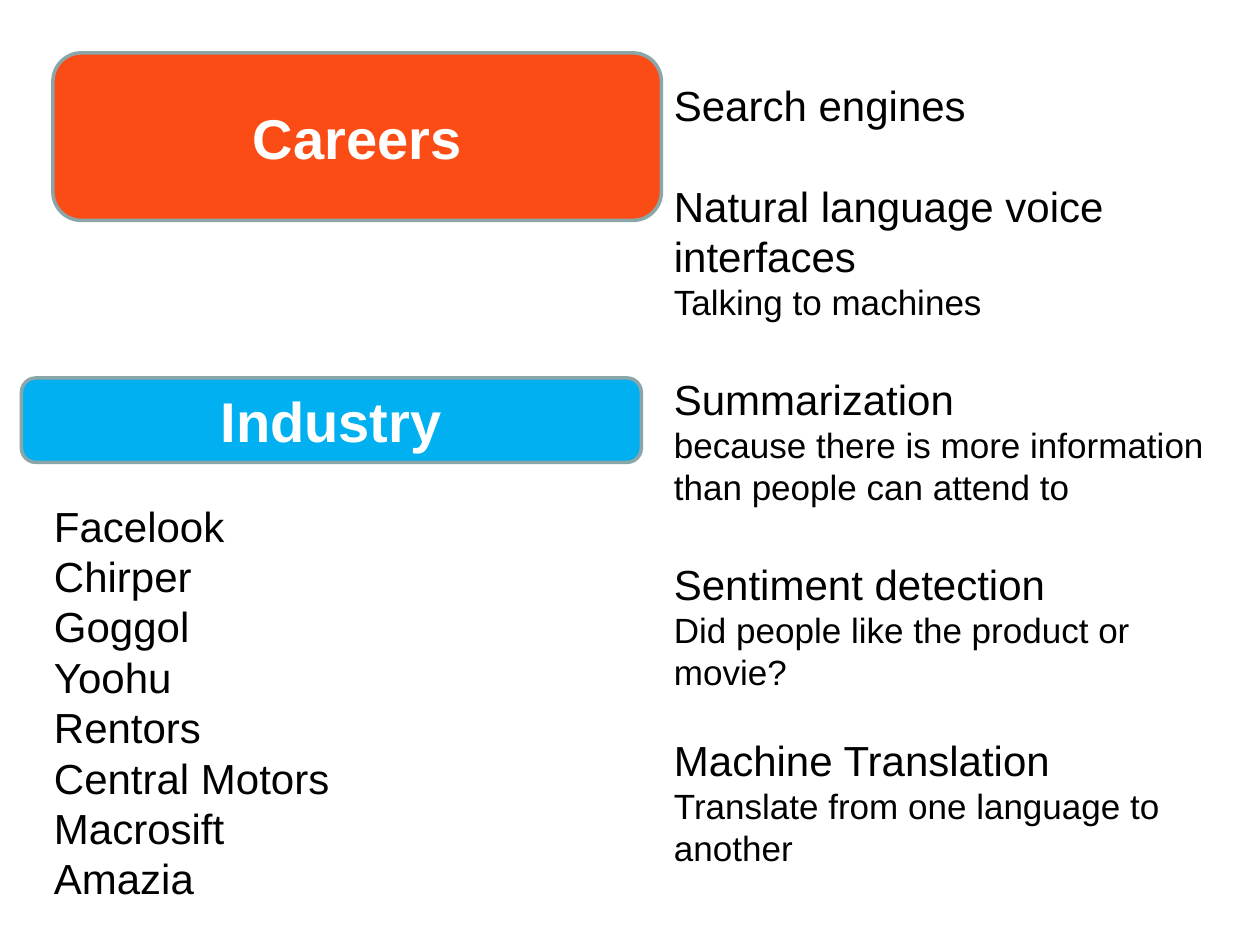
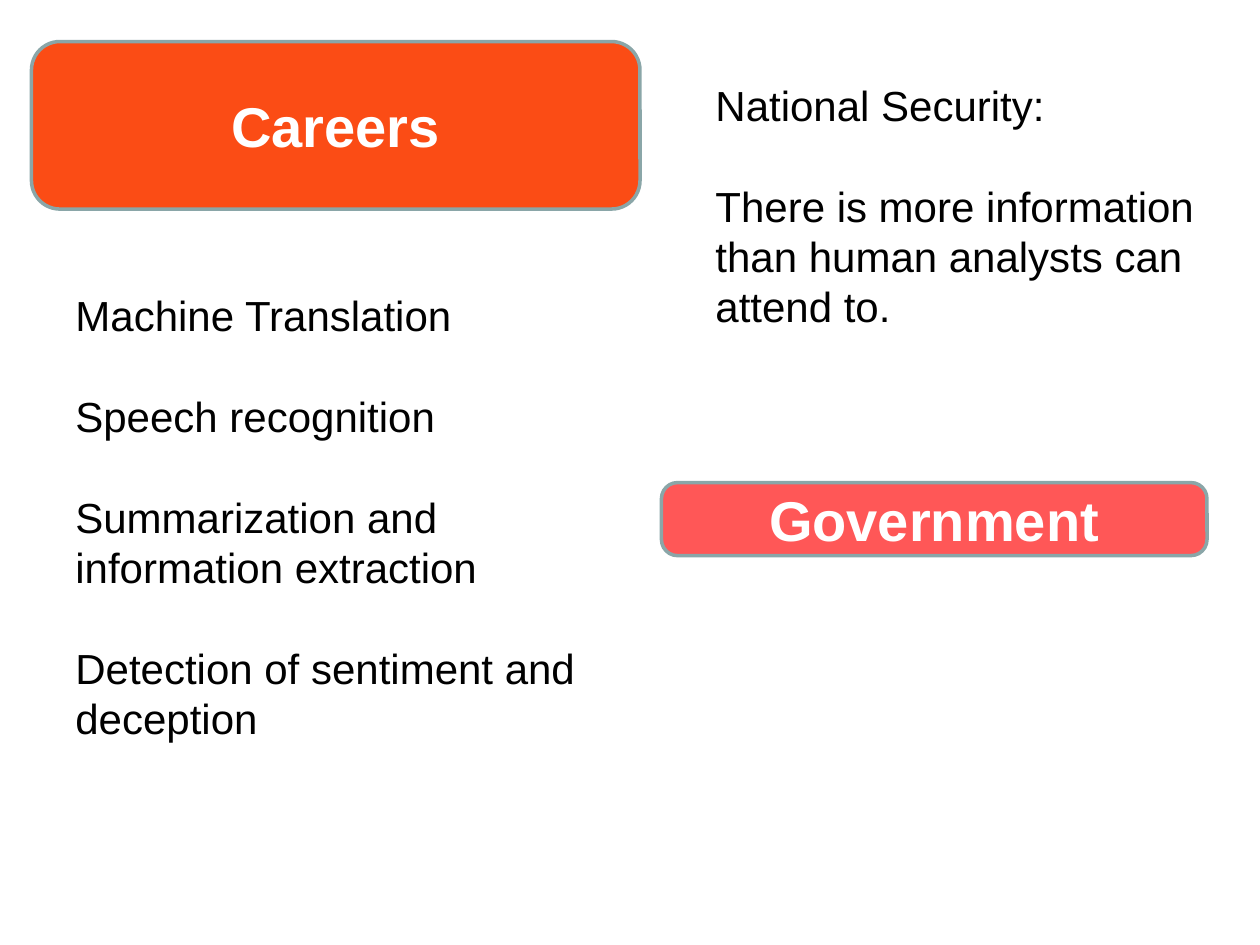
from pptx import Presentation
from pptx.dml.color import RGBColor
from pptx.enum.shapes import MSO_SHAPE
from pptx.enum.text import MSO_ANCHOR, PP_ALIGN
from pptx.util import Inches, Pt

ORANGE = RGBColor(0xFB, 0x4C, 0x15)
BLUE = RGBColor(0x00, 0xB0, 0xF0)
RED = RGBColor(0xFF, 0x57, 0x57)
EDGE = RGBColor(0x8A, 0xA6, 0xA8)
WHITE = RGBColor(0xFF, 0xFF, 0xFF)
BLACK = RGBColor(0x00, 0x00, 0x00)

HEAD, NOTE = 24, 20
LEADING = 1.2
BANNER = {"name": "Arial", "size": Pt(32), "bold": True}
BODY = {"name": "Arial"}

FIRMS = ["Facelook", "Chirper", "Goggol", "Yoohu", "Rentors",
         "Central Motors", "Macrosift", "Amazia"]

# Each line is text, size and the size of the empty line above it.
USES = [
    ("Search engines", HEAD, 0),
    ("Natural language voice interfaces", HEAD, HEAD),
    ("Talking to machines", NOTE, 0),
    ("Summarization", HEAD, HEAD),
    ("because there is more information than people can attend to", NOTE, 0),
    ("Sentiment detection", HEAD, HEAD),
    ("Did people like the product or movie?", NOTE, 0),
    ("Machine Translation", HEAD, NOTE),
    ("Translate from one language to another", NOTE, 0),
]
NEED = ["National Security:",
        "There is more information than human analysts can attend to."]
TASKS = ["Machine Translation", "Speech recognition",
         "Summarization and information extraction",
         "Detection of sentiment and deception"]


def style(font, color, form):
    for key, value in form.items():
        setattr(font, key, value)
    font.color.rgb = color


def add_banner(slide, text, fill, left, top, width, height, curve=0.17):
    box = slide.shapes.add_shape(
        MSO_SHAPE.ROUNDED_RECTANGLE,
        *map(Inches, (left, top, width, height)))
    box.adjustments[0] = curve
    box.shadow.inherit = False
    box.fill.solid()
    box.fill.fore_color.rgb = fill
    box.line.color.rgb = EDGE
    box.line.width = Pt(2)
    frame = box.text_frame
    frame.vertical_anchor = MSO_ANCHOR.MIDDLE
    para = frame.paragraphs[0]
    para.alignment = PP_ALIGN.CENTER
    run = para.add_run()
    run.text = text
    style(run.font, WHITE, BANNER)


def add_title(slide, left, top):
    add_banner(slide, "Careers", ORANGE, left, top, 4.83, 1.33)


def add_lines(slide, lines, left, top, width, height):
    box = slide.shapes.add_textbox(
        *map(Inches, (left, top, width, height)))
    frame = box.text_frame
    frame.word_wrap = True
    for index, (text, size, gap) in enumerate(lines):
        para = frame.add_paragraph() if index else frame.paragraphs[0]
        para.line_spacing = Pt(size * LEADING)
        para.space_before = Pt(gap * LEADING)
        run = para.add_run()
        run.text = text
        style(run.font, BLACK, {**BODY, "size": Pt(size)})


def heads(texts, gap=0):
    """Turn plain texts into lines of one size, with a gap between them."""
    return [(text, HEAD, gap if index else 0)
            for index, text in enumerate(texts)]


def add_industry(slide):
    add_title(slide, 0.42, 0.42)
    add_banner(slide, "Industry", BLUE, 0.17, 3, 4.92, 0.67)
    add_lines(slide, USES, 5.25, 0.58, 4.58, 7.24)
    add_lines(slide, heads(FIRMS), 0.33, 3.92, 4.5, 3.33)


def add_state(slide):
    add_title(slide, 0.25, 0.33)
    add_banner(slide, "Government", RED, 5.25, 3.83, 4.33, 0.58, 0.22)
    add_lines(slide, heads(NEED, HEAD), 5.58, 0.58, 4.08, 2.12)
    add_lines(slide, heads(TASKS, HEAD), 0.5, 2.25, 4.42, 4.54)


def main():
    deck = Presentation()
    deck.slide_width, deck.slide_height = Inches(10), Inches(7.5)
    blank = deck.slide_layouts[6]
    for build in (add_industry, add_state):
        build(deck.slides.add_slide(blank))
    deck.save("out.pptx")


if __name__ == "__main__":
    main()
